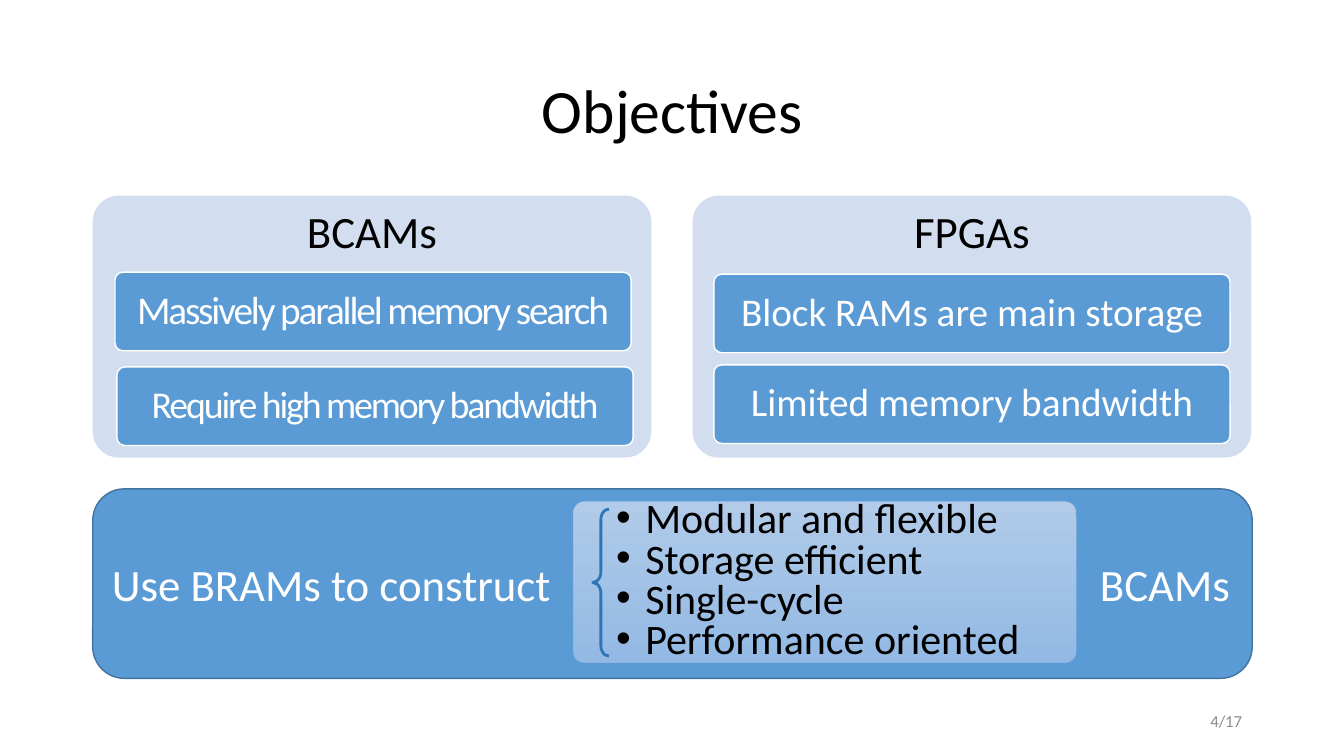
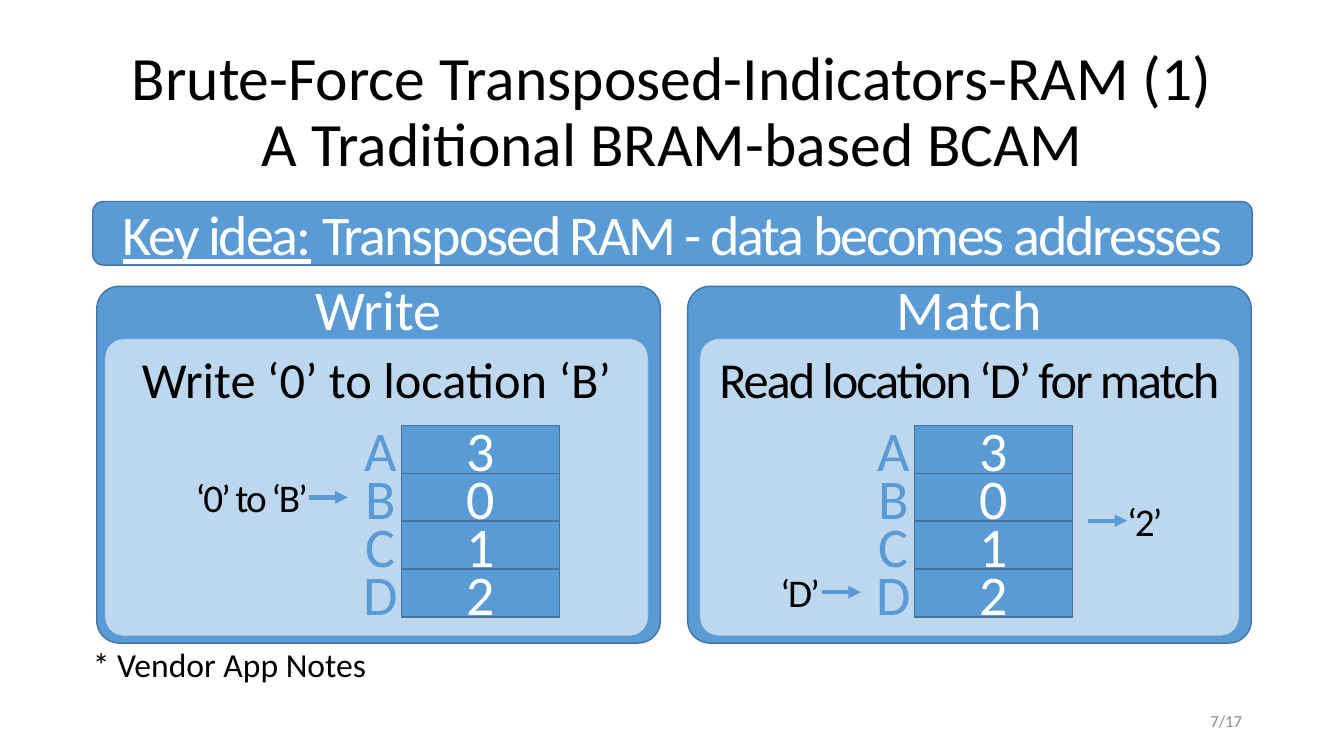
from lxml import etree
from pptx import Presentation
from pptx.dml.color import RGBColor
from pptx.enum.shapes import MSO_CONNECTOR, MSO_SHAPE
from pptx.enum.text import MSO_ANCHOR, MSO_AUTO_SIZE, PP_ALIGN
from pptx.oxml.ns import qn
from pptx.util import Inches, Pt

LEFT, CENTER, RIGHT = PP_ALIGN.LEFT, PP_ALIGN.CENTER, PP_ALIGN.RIGHT
TOP, MIDDLE = MSO_ANCHOR.TOP, MSO_ANCHOR.MIDDLE
ROUNDED, RECTANGLE, BRACE = MSO_SHAPE.ROUNDED_RECTANGLE, MSO_SHAPE.RECTANGLE, MSO_SHAPE.LEFT_BRACE
STRAIGHT = MSO_CONNECTOR.STRAIGHT
NO_FIT = MSO_AUTO_SIZE.NONE
TITLE_AND_CONTENT, TITLE_ONLY = 1, 5

FONT = "Calibri"
BLACK, WHITE, GRAY = "000000", "FFFFFF", "8C8C8C"
BLUE, EDGE, BRACE_BLUE = "5B9BD5", "43739E", "2E75B6"
PALE, LIGHT = "D2DEEF", "BDD7EE"
GRADIENT = ("B1CBE9", "93B9E4")
MARGIN, CONTENT_WIDTH = 0.92, 11.5
ROW_HEIGHT = 0.475
NO_INSETS = (0, 0, 0, 0)
INSETS = (0.1, 0.05, 0.1, 0.05)


def rgb(value):
    return RGBColor.from_string(value)


class Deck:
    def __init__(self):
        self.presentation = Presentation()
        self.presentation.slide_width = Inches(13.33)
        self.presentation.slide_height = Inches(7.5)
        self.slide = None

    def start(self, layout, title, page):
        self.slide = self.presentation.slides.add_slide(self.presentation.slide_layouts[layout])
        heading = self.slide.shapes.title
        self.place(heading, MARGIN, 0.4, CONTENT_WIDTH, 1.45)
        self.set_text(heading, title, 44, BLACK, spacing=0.9)
        self.label(page, 9.42, 6.95, 3, 0.4, 12, GRAY, RIGHT, MIDDLE, INSETS)

    def place(self, shape, left, top, width, height):
        shape.left, shape.top = Inches(left), Inches(top)
        shape.width, shape.height = Inches(width), Inches(height)

    def set_text(self, shape, text, size, color, align=CENTER, anchor=MIDDLE,
                 insets=INSETS, spacing=None, tracking=None):
        frame = shape.text_frame
        frame.text = text
        frame.word_wrap = True
        frame.auto_size = NO_FIT
        frame.vertical_anchor = anchor
        frame.margin_left, frame.margin_top, frame.margin_right, frame.margin_bottom = map(Inches, insets)
        for paragraph in frame.paragraphs:
            paragraph.alignment = align
            paragraph.space_before = Pt(0)
            if spacing:
                paragraph.line_spacing = spacing
            for run in paragraph.runs:
                self.style(run, size, color, tracking)

    def style(self, run, size, color, tracking=None):
        run.font.name = FONT
        run.font.size = Pt(size)
        run.font.color.rgb = rgb(color)
        if tracking:
            run.font._element.set("spc", str(int(tracking * 100)))

    def box(self, left, top, width, height, fill=None, line=None, weight=1,
            kind=ROUNDED, adjustments=()):
        shape = self.slide.shapes.add_shape(
            kind, Inches(left), Inches(top), Inches(width), Inches(height))
        shape.shadow.inherit = False
        for index, value in enumerate(adjustments):
            shape.adjustments[index] = value
        if isinstance(fill, tuple):
            shape.fill.gradient()
            shape.fill.gradient_angle = 270
            for stop, color in zip(shape.fill.gradient_stops, fill):
                stop.color.rgb = rgb(color)
        elif fill:
            shape.fill.solid()
            shape.fill.fore_color.rgb = rgb(fill)
        else:
            shape.fill.background()
        if line:
            shape.line.color.rgb = rgb(line)
            shape.line.width = Pt(weight)
        else:
            shape.line.fill.background()
        return shape

    def label(self, text, left, top, width, height, size, color, align=LEFT, anchor=TOP,
              insets=NO_INSETS, tracking=None):
        caption = self.slide.shapes.add_textbox(
            Inches(left), Inches(top), Inches(width), Inches(height))
        self.set_text(caption, text, size, color, align, anchor, insets, tracking=tracking)
        return caption

    def bullets(self, items, left, top, width, height):
        body = self.slide.placeholders[1]
        self.slide.shapes._spTree.append(body._element)
        self.place(body, left, top, width, height)
        self.set_text(body, "\n".join(items), 30, BLACK, LEFT, spacing=0.8)
        for paragraph in body.text_frame.paragraphs:
            properties = paragraph._p.get_or_add_pPr()
            properties.set("marL", str(Inches(0.58)))
            properties.set("indent", str(Inches(-0.29)))
            etree.SubElement(properties, qn("a:buFont")).set("typeface", "Arial")
            etree.SubElement(properties, qn("a:buChar")).set("char", "•")

    def arrow(self, left, middle, right):
        connector = self.slide.shapes.add_connector(
            STRAIGHT, Inches(left), Inches(middle), Inches(right), Inches(middle))
        connector.line.color.rgb = rgb(BLUE)
        connector.line.width = Pt(3)
        etree.SubElement(connector.line._get_or_add_ln(), qn("a:tailEnd")).set("type", "triangle")
        etree.SubElement(connector._element.spPr, qn("a:effectLst"))
        return connector

    def topic(self, left, name, facts, tracking):
        panel = self.box(left, 1.94, 5.54, 2.6, PALE, adjustments=[0.1])
        self.set_text(panel, name, 32, BLACK, anchor=TOP, insets=(0.13, 0.07, 0.13, 0), spacing=0.9)
        for fact, offset, top, size in facts:
            tile = self.box(left + offset, top, 5.12, 0.78, BLUE, WHITE, adjustments=[0.1])
            self.set_text(tile, fact, size, WHITE, spacing=0.9, tracking=tracking)

    def operation(self, left, name, inner_left, inner_width, summary, tracking):
        frame = self.box(left, 2.84, 5.59, 3.54, BLUE, EDGE, adjustments=[0.063])
        self.set_text(frame, name, 40, WHITE, anchor=TOP, insets=NO_INSETS, spacing=0.7)
        panel = self.box(inner_left, 3.36, inner_width, 2.95, LIGHT, BLUE, 0.5, adjustments=[0.063])
        self.set_text(panel, summary, 36, BLACK, anchor=TOP, insets=(0, 0.04, 0, 0), tracking=tracking)

    def memory(self, left, top=4.22):
        for row, (address, value) in enumerate(zip("ABCD", "3012")):
            row_top = top + row * ROW_HEIGHT
            cell = self.box(left, row_top, 1.57, ROW_HEIGHT, BLUE, EDGE, kind=RECTANGLE)
            self.set_text(cell, value, 40, WHITE, insets=NO_INSETS)
            self.label(address, left - 0.4, row_top, 0.39, ROW_HEIGHT, 40, BLUE, CENTER, MIDDLE)

    def signal(self, text, left, top, width, incoming):
        caption = self.label(text, left, top, width, 0.47, 28, BLACK, tracking=-1.5)
        middle = top + 0.235
        if incoming:
            self.arrow(left + width, middle, left + width + 0.39).begin_connect(caption, 3)
        else:
            self.arrow(left - 0.39, middle, left).end_connect(caption, 1)


def objectives(deck):
    deck.start(TITLE_AND_CONTENT, "Objectives", "4/17")
    deck.topic(MARGIN, "BCAMs", [
        ("Massively parallel memory search", 0.22, 2.7, 28),
        ("Require high memory bandwidth", 0.24, 3.64, 27),
    ], -1.5)
    deck.topic(6.87, "FPGAs", [
        ("Block RAMs are main storage", 0.21, 2.72, 28),
        ("Limited memory bandwidth", 0.21, 3.62, 28),
    ], None)

    goal = deck.box(MARGIN, 4.85, CONTENT_WIDTH, 1.88, BLUE, EDGE)
    deck.set_text(goal, "Use BRAMs to construct\tBCAMs", 32, WHITE, LEFT)
    tabs = etree.SubElement(goal.text_frame.paragraphs[0]._p.get_or_add_pPr(), qn("a:tabLst"))
    stop = etree.SubElement(tabs, qn("a:tab"))
    stop.set("pos", str(Inches(9.8)))
    stop.set("algn", "l")

    deck.box(5.68, 4.97, 5, 1.61, GRADIENT, BLUE, 0.5, adjustments=[0.073])
    deck.bullets(["Modular and flexible", "Storage efficient", "Single-cycle", "Performance oriented"],
                 5.72, 4.97, 4.92, 1.61)
    deck.box(5.88, 5.05, 0.16, 1.46, line=BRACE_BLUE, weight=2, kind=BRACE, adjustments=[0.657, 0.5])


def transposed_ram(deck):
    deck.start(TITLE_ONLY,
               "Brute-Force Transposed-Indicators-RAM (1)\vA Traditional BRAM-based BCAM", "7/17")
    key_idea = deck.box(MARGIN, 2, CONTENT_WIDTH, 0.63, BLUE, EDGE)
    deck.set_text(key_idea, "Key idea:", 40, WHITE, tracking=-1.5)
    sentence = key_idea.text_frame.paragraphs[0]
    sentence.runs[0].font.underline = True
    explanation = sentence.add_run()
    explanation.text = " Transposed RAM - data becomes addresses"
    deck.style(explanation, 40, WHITE, -1.5)

    deck.operation(0.96, "Write", 1.04, 5.39, "Write ‘0’ to location ‘B’", None)
    deck.operation(6.82, "Match", 6.94, 5.35, "Read location ‘D’ for match", -1.5)
    for memory_left in (3.98, 9.07):
        deck.memory(memory_left)
    deck.signal("‘0’ to ‘B’", 1.94, 4.7, 1.12, incoming=True)
    deck.signal("‘D’", 7.74, 5.64, 0.41, incoming=True)
    deck.signal("‘2’", 11.18, 4.93, 0.38, incoming=False)
    deck.label("* Vendor App Notes", MARGIN, 6.39, 5.65, 0.4, 24, BLACK)


def main():
    deck = Deck()
    objectives(deck)
    transposed_ram(deck)
    deck.presentation.save("out.pptx")


if __name__ == "__main__":
    main()
